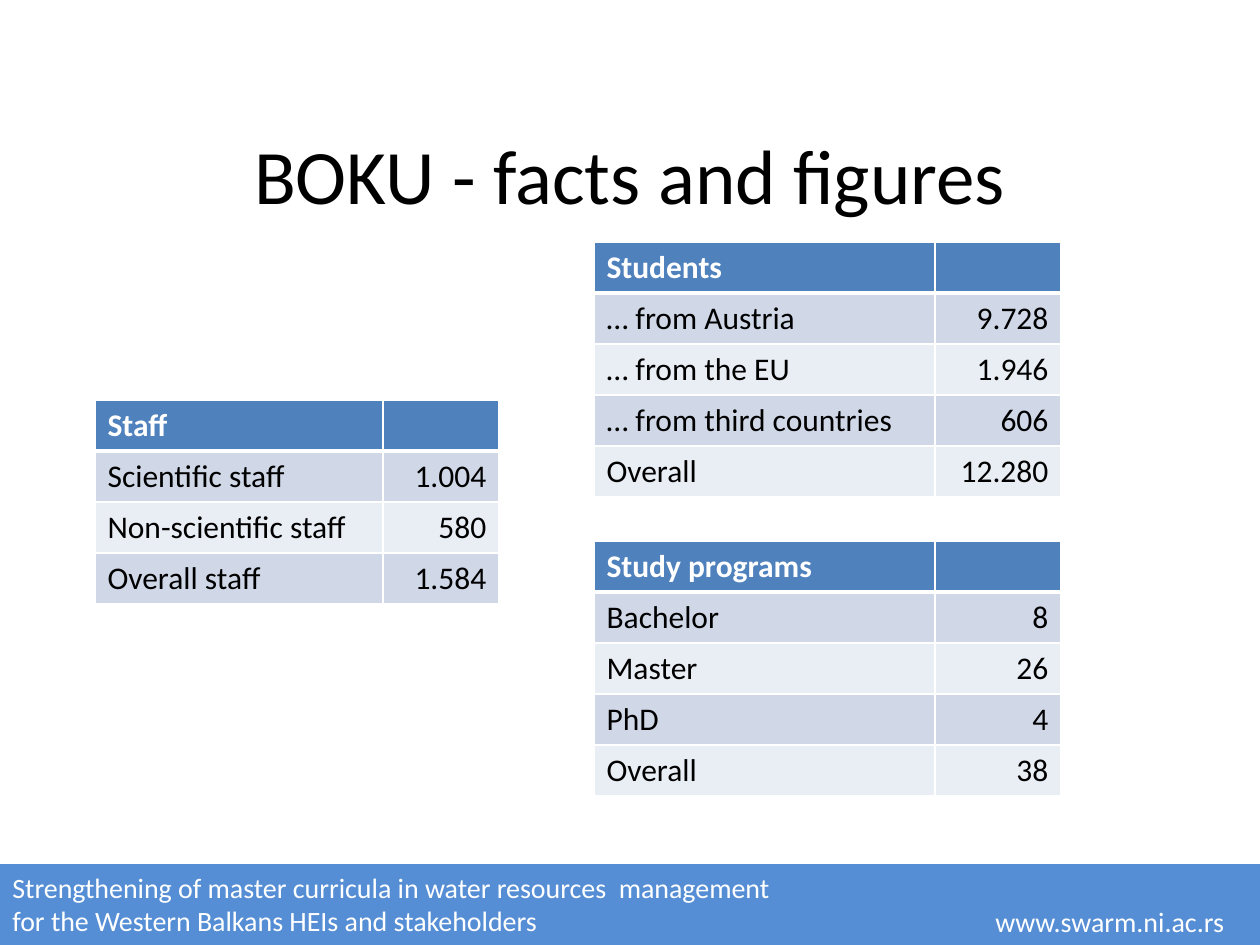
from dataclasses import dataclass

from lxml import etree
from pptx import Presentation
from pptx import util as u
from pptx.dml.color import RGBColor
from pptx.enum import shapes, text
from pptx.oxml import ns

PX_PER_INCH = 126


@dataclass(frozen=True)
class Theme:
    font: str = "Calibri"
    ink: str = "000000"
    paper: str = "FFFFFF"
    header: str = "4F81BD"
    bands: tuple[str, str] = ("D0D8E8", "E9EDF4")
    footer: str = "558ED5"
    title_size: int = 44
    table_size: int = 18
    footer_size: int = 16
    thin_border: int = 1
    header_border: int = 3


@dataclass(frozen=True)
class Area:
    left: int
    top: int
    width: int
    height: int


@dataclass(frozen=True)
class FactTable:
    left: int
    top: int
    columns: tuple[int, int]
    heading: str
    facts: tuple[tuple[str, str], ...]


THEME = Theme()
ROW_HEIGHT = 51
TITLE = Area(63, 116, 1134, 116)
FOOTER = Area(0, 864, 1260, 81)
PROJECT = Area(0, 864, 839, 81)
WEBSITE = Area(983, 898, 254, 47)
RIGHT_LEFT, RIGHT_COLUMNS = 594, (341, 126)

TABLES = (
    FactTable(95, 400, (288, 116), "Staff", (
        ("Scientific staff", "1.004"),
        ("Non-scientific staff", "580"),
        ("Overall staff", "1.584"),
    )),
    FactTable(RIGHT_LEFT, 242, RIGHT_COLUMNS, "Students", (
        ("… from Austria", "9.728"),
        ("… from the EU", "1.946"),
        ("… from third countries", "606"),
        ("Overall", "12.280"),
    )),
    FactTable(RIGHT_LEFT, 541, RIGHT_COLUMNS, "Study programs", (
        ("Bachelor", "8"),
        ("Master", "26"),
        ("PhD", "4"),
        ("Overall", "38"),
    )),
)


def px(length: int) -> u.Emu:
    return u.Inches(length / PX_PER_INCH)


def place(area: Area) -> tuple[u.Emu, ...]:
    return px(area.left), px(area.top), px(area.width), px(area.height)


def format_font(font, size: int, color: str, bold: bool = False) -> None:
    values = {"name": THEME.font, "size": u.Pt(size), "bold": bold}
    for name, value in values.items():
        setattr(font, name, value)
    font.color.rgb = RGBColor.from_string(color)


def write(para, words: str, size: int, color: str, bold: bool = False) -> None:
    span = para.add_run()
    span.text = words
    format_font(span.font, size, color, bold)


def set_title(page, words: str) -> None:
    title = page.shapes.title
    title.left, title.top, title.width, title.height = place(TITLE)
    title.text_frame.vertical_anchor = text.MSO_ANCHOR.MIDDLE
    para = title.text_frame.paragraphs[0]
    para.alignment = text.PP_ALIGN.CENTER
    write(para, words, THEME.title_size, THEME.ink)


def add_footer_text(page, area: Area, lines: tuple[str, ...], wrap: bool) -> None:
    frame = page.shapes.add_textbox(*place(area)).text_frame
    frame.word_wrap = wrap
    for index, line in enumerate(lines):
        para = frame.add_paragraph() if index else frame.paragraphs[0]
        write(para, line, THEME.footer_size, THEME.paper)


def add_footer(page) -> None:
    band = page.shapes.add_shape(shapes.MSO_SHAPE.FLOWCHART_PROCESS, *place(FOOTER))
    band.shadow.inherit = False
    band.fill.solid()
    band.fill.fore_color.rgb = RGBColor.from_string(THEME.footer)
    band.line.fill.background()
    add_footer_text(page, PROJECT, (
        "Strengthening of master curricula in water resources  management",
        "for the Western Balkans HEIs and stakeholders",
    ), True)
    add_footer_text(page, WEBSITE, ("www.swarm.ni.ac.rs",), False)


def set_borders(cell, top: int, bottom: int) -> None:
    properties = cell._tc.get_or_add_tcPr()
    widths = {"lnL": THEME.thin_border, "lnR": THEME.thin_border,
              "lnT": top, "lnB": bottom}
    for side, width in widths.items():
        line = etree.SubElement(properties, ns.qn(f"a:{side}"), w=str(u.Pt(width)))
        fill = etree.SubElement(line, ns.qn("a:solidFill"))
        etree.SubElement(fill, ns.qn("a:srgbClr"), val=THEME.paper)


def add_fact_table(page, spec: FactTable) -> None:
    rows = ((spec.heading, ""), *spec.facts)
    area = Area(spec.left, spec.top, sum(spec.columns), ROW_HEIGHT * len(rows))
    table = page.shapes.add_table(len(rows), len(spec.columns), *place(area)).table
    for column, width in zip(table.columns, spec.columns):
        column.width = px(width)
    for row_index, row in enumerate(rows):
        table.rows[row_index].height = px(ROW_HEIGHT)
        is_header = row_index == 0
        fill = THEME.header if is_header else THEME.bands[(row_index - 1) % 2]
        color = THEME.paper if is_header else THEME.ink
        top = THEME.header_border if row_index == 1 else THEME.thin_border
        bottom = THEME.header_border if is_header else THEME.thin_border
        for column_index, words in enumerate(row):
            cell = table.cell(row_index, column_index)
            set_borders(cell, top, bottom)
            cell.fill.solid()
            cell.fill.fore_color.rgb = RGBColor.from_string(fill)
            if words:
                para = cell.text_frame.paragraphs[0]
                if column_index:
                    para.alignment = text.PP_ALIGN.RIGHT
                write(para, words, THEME.table_size, color, is_header)


def main() -> None:
    deck = Presentation()
    deck.slide_width, deck.slide_height = u.Inches(10), u.Inches(7.5)
    page = deck.slides.add_slide(deck.slide_layouts.get_by_name("Title Only"))
    add_footer(page)
    set_title(page, "BOKU - facts and figures")
    for spec in TABLES:
        add_fact_table(page, spec)
    deck.save("out.pptx")


if __name__ == "__main__":
    main()
